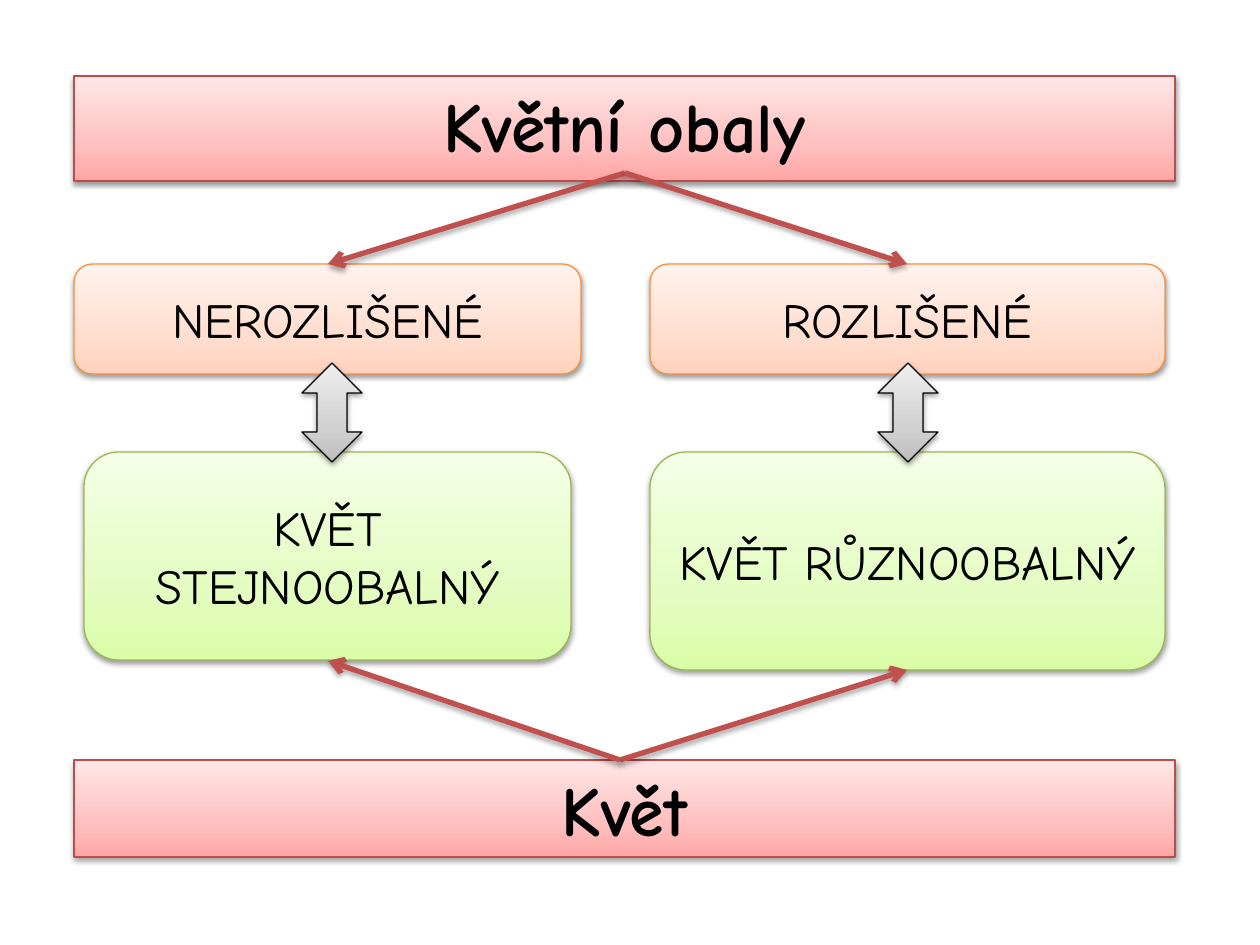
from copy import deepcopy
from dataclasses import dataclass

from lxml import etree
from pptx import Presentation
from pptx import util as u
from pptx.dml.color import RGBColor
from pptx.enum import shapes, text
from pptx.oxml.ns import qn

SCALE = 914400 / 126  # EMU per px
FONT = "Comic Neue"
COLORS = {"text": "000000", "link": "C0504D", "shadow": "000000"}
LINES = {"red": "BF4C48", "orange": "F69240", "green": "98B955", "gray": "000000"}
# Gradient colours from bottom to top
GRADIENTS = {
    "red": ("FFA6A5", "FFC0BF", "FFE7E7"),
    "orange": ("FFD2BD", "FFDED0", "FFF2ED"),
    "green": ("DAFDA7", "E4FCC2", "F5FFE7"),
    "gray": ("BDBDBD", "D1D1D1", "EEEEEE"),
}
STOPS = (0, 0.35, 1)
BAR_FORMAT = {"size": u.Pt(40), "bold": True, "name": FONT}
BOX_FORMAT = {"size": u.Pt(28), "bold": False, "name": FONT}


@dataclass
class Block:
    left: int
    top: int
    width: int
    height: int
    color: str
    label: str = ""


@dataclass
class Link:
    start: tuple[int, int]
    end: tuple[int, int]


TITLE = Block(74, 76, 1101, 97, "red", "Květní obaly")
FOOTER = Block(74, 760, 1101, 97, "red", "Květ")
BOXES = [
    Block(74, 264, 507, 110, "orange", "NEROZLIŠENÉ"),
    Block(650, 264, 515, 110, "orange", "ROZLIŠENÉ"),
    Block(84, 452, 487, 208, "green", "KVĚT STEJNOOBALNÝ"),
    Block(650, 452, 515, 218, "green", "KVĚT RŮZNOOBALNÝ"),
]
LINKS = [
    Link((625, 173), (328, 264)),
    Link((625, 173), (907, 264)),
    Link((620, 760), (907, 670)),
    Link((620, 760), (328, 661)),
]
DOUBLE_ARROWS = [Block(left, 363, 60, 99, "gray") for left in (302, 878)]


def px(length: int) -> int:
    return round(length * SCALE)


def add_shadow(shape, distance: int, opacity: int) -> None:
    effects = etree.SubElement(shape._element.spPr, qn("a:effectLst"))
    shadow = etree.SubElement(effects, qn("a:outerShdw"), blurRad="40000",
                              dist=str(distance), dir="5400000", rotWithShape="0")
    color = etree.SubElement(shadow, qn("a:srgbClr"), val=COLORS["shadow"])
    etree.SubElement(color, qn("a:alpha"), val=str(opacity * 1000))


def style_block(shape, block: Block) -> None:
    shape.left, shape.top = px(block.left), px(block.top)
    shape.width, shape.height = px(block.width), px(block.height)
    shape.fill.gradient()
    shape.fill.gradient_angle = 90
    stop_list = shape._element.spPr.find(".//" + qn("a:gsLst"))
    stop_list.append(deepcopy(stop_list[-1]))
    for stop, position, color in zip(shape.fill.gradient_stops, STOPS,
                                     GRADIENTS[block.color]):
        stop.position = position
        stop.color.rgb = RGBColor.from_string(color)
    shape.line.color.rgb = RGBColor.from_string(LINES[block.color])
    shape.line.width = u.Pt(0.75)
    add_shadow(shape, 20000, 38)


def write_label(shape, label: str, font_format: dict, frame_format: dict) -> None:
    frame = shape.text_frame
    frame.text = label
    for name, value in frame_format.items():
        setattr(frame, name, value)
    paragraph = frame.paragraphs[0]
    paragraph.alignment = text.PP_ALIGN.CENTER
    font = paragraph.runs[0].font
    for name, value in font_format.items():
        setattr(font, name, value)
    font.color.rgb = RGBColor.from_string(COLORS["text"])


def add_block(slide, block: Block, kind: shapes.MSO_SHAPE):
    shape = slide.shapes.add_shape(kind, 0, 0, 0, 0)
    style_block(shape, block)
    return shape


def add_link(slide, link: Link) -> None:
    connector = slide.shapes.add_connector(
        shapes.MSO_CONNECTOR.STRAIGHT, *map(px, link.start + link.end))
    connector.line.color.rgb = RGBColor.from_string(COLORS["link"])
    connector.line.width = u.Pt(3)
    etree.SubElement(connector.line._get_or_add_ln(), qn("a:tailEnd"), type="arrow")
    add_shadow(connector, 23000, 35)


def main() -> None:
    presentation = Presentation()
    presentation.slide_width, presentation.slide_height = px(1260), px(945)
    slide = presentation.slides.add_slide(presentation.slide_layouts[5])
    bar_frame = {"word_wrap": True, "vertical_anchor": text.MSO_ANCHOR.TOP,
                 "auto_size": text.MSO_AUTO_SIZE.SHAPE_TO_FIT_TEXT}
    box_frame = {"word_wrap": True, "vertical_anchor": text.MSO_ANCHOR.MIDDLE}

    # Title and bottom bar
    title = slide.shapes.title
    style_block(title, TITLE)
    write_label(title, TITLE.label, BAR_FORMAT, bar_frame)
    footer = add_block(slide, FOOTER, shapes.MSO_SHAPE.RECTANGLE)
    write_label(footer, FOOTER.label, BAR_FORMAT, bar_frame)

    # Perianth types and the matching flowers
    for block in BOXES:
        box = add_block(slide, block, shapes.MSO_SHAPE.ROUNDED_RECTANGLE)
        write_label(box, block.label, BOX_FORMAT, box_frame)

    # Links from the bars, then arrows between the rows
    for link in LINKS:
        add_link(slide, link)
    for block in DOUBLE_ARROWS:
        add_block(slide, block, shapes.MSO_SHAPE.UP_DOWN_ARROW)

    presentation.save("out.pptx")


if __name__ == "__main__":
    main()
